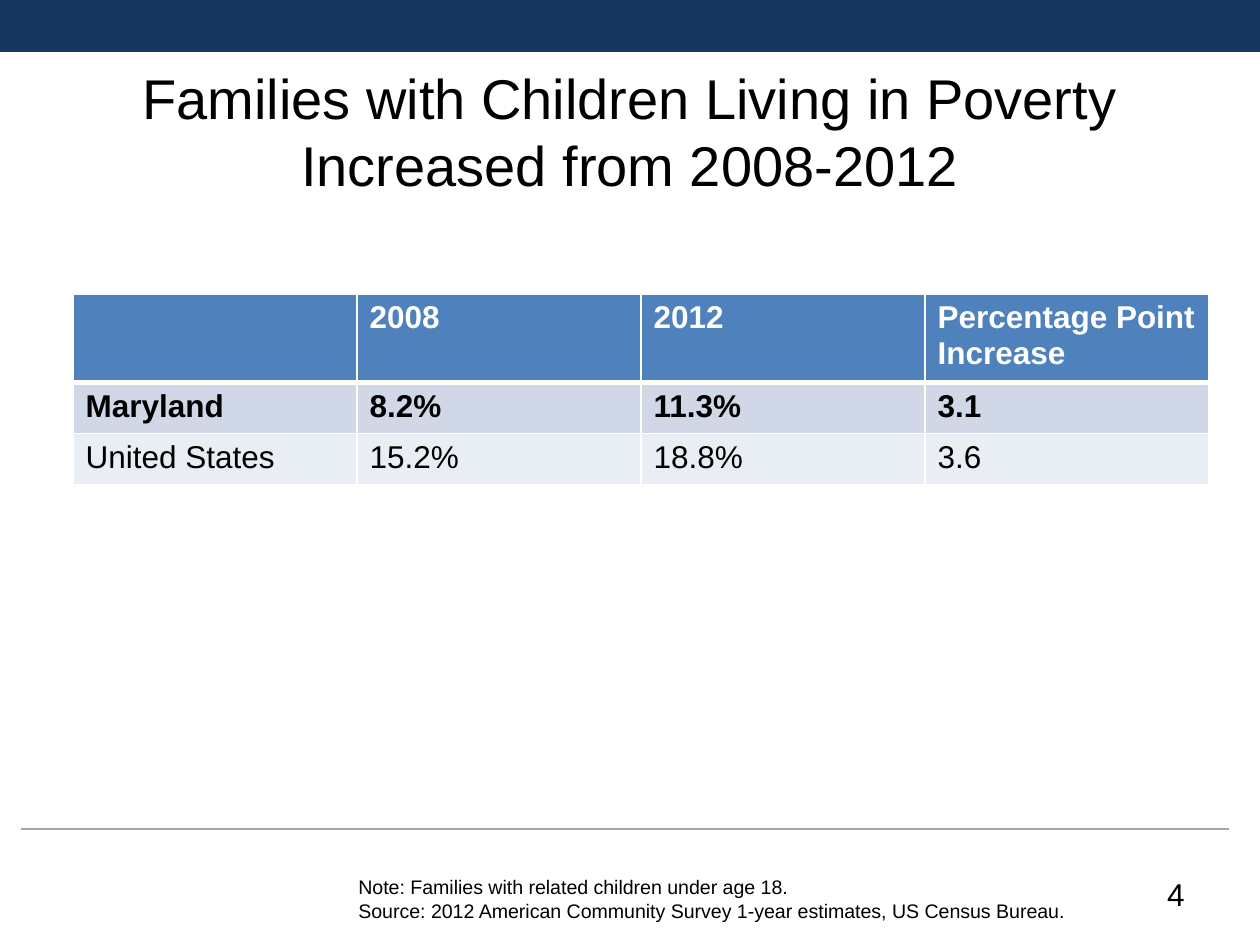
from pptx import Presentation
from pptx import util as u
from pptx.dml.color import RGBColor
from pptx.enum import shapes, text
from pptx.oxml.ns import qn
from lxml import etree

EMU_PER_PX = 914400 / 126
COLORS = {
    "navy": "17375E",
    "rule": "A6A6A6",
    "black": "000000",
    "white": "FFFFFF",
    "header": "4F81BD",
    "band_dark": "D0D8E8",
    "band_light": "E9EDF4",
}


def px(length):
    return u.Emu(round(length * EMU_PER_PX))


def rgb(name):
    return RGBColor.from_string(COLORS[name])


class SlideBuilder:
    font_name = "Arial"

    def __init__(self, slide):
        self.slide = slide

    def style(self, para, size, color="black", bold=False):
        para.font.name = self.font_name
        para.font.size = u.Pt(size)
        para.font.bold = bold
        para.font.color.rgb = rgb(color)

    def bar(self, left, top, width, height, color):
        bar = self.slide.shapes.add_shape(
            shapes.MSO_SHAPE.RECTANGLE, px(left), px(top), px(width), px(height))
        bar.shadow.inherit = False
        bar.fill.solid()
        bar.fill.fore_color.rgb = rgb(color)
        bar.line.fill.background()

    def rule(self, left, right, y, color, weight):
        rule = self.slide.shapes.add_connector(
            shapes.MSO_CONNECTOR.STRAIGHT, px(left), px(y), px(right), px(y))
        rule.line.color.rgb = rgb(color)
        rule.line.width = u.Pt(weight)
        etree.SubElement(rule._element.spPr, qn("a:effectLst"))

    def text(self, left, top, width, height, lines, size,
             align=text.PP_ALIGN.LEFT, anchor=text.MSO_ANCHOR.TOP):
        box = self.slide.shapes.add_textbox(px(left), px(top), px(width), px(height))
        frame = box.text_frame
        frame.word_wrap = True
        frame.vertical_anchor = anchor
        frame.text = "\n".join(lines)
        for para in frame.paragraphs:
            para.alignment = align
            self.style(para, size)

    def borders(self, cell, bottom):
        properties = cell._tc.get_or_add_tcPr()
        weights = {"lnL": 1, "lnR": 1, "lnT": 1, "lnB": bottom}
        for position, (side, weight) in enumerate(weights.items()):
            line = etree.Element(qn(f"a:{side}"), w=str(u.Pt(weight)))
            fill = etree.SubElement(line, qn("a:solidFill"))
            etree.SubElement(fill, qn("a:srgbClr"), val=COLORS["white"])
            properties.insert(position, line)

    def table(self, left, top, column_width, heights, rows, looks, size):
        columns = len(rows[0])
        table = self.slide.shapes.add_table(
            len(rows), columns, px(left), px(top),
            px(column_width * columns), px(sum(heights))).table
        for column in table.columns:
            column.width = px(column_width)
        for r, (values, height, look) in enumerate(zip(rows, heights, looks)):
            fill, color, bold, bottom = look
            table.rows[r].height = px(height)
            for c, value in enumerate(values):
                cell = table.cell(r, c)
                cell.text = value
                cell.fill.solid()
                cell.fill.fore_color.rgb = rgb(fill)
                self.style(cell.text_frame.paragraphs[0], size, color, bold)
                self.borders(cell, bottom)


def main():
    deck = Presentation()
    deck.slide_width, deck.slide_height = px(1260), px(945)
    page = SlideBuilder(deck.slides.add_slide(deck.slide_layouts[6]))

    page.bar(0, 0, 1260, 52, "navy")
    page.rule(21, 1229, 829, "rule", 0.75)
    page.text(63, 63, 1134, 136,
              ["Families with Children Living in Poverty Increased from 2008-2012"],
              32, text.PP_ALIGN.CENTER, text.MSO_ANCHOR.MIDDLE)
    page.table(
        73, 294, 284, [83, 51, 51],
        [["", "2008", "2012", "Percentage Point Increase"],
         ["Maryland", "8.2%", "11.3%", "3.1"],
         ["United States", "15.2%", "18.8%", "3.6"]],
        [("header", "white", True, 3),
         ("band_dark", "black", True, 1),
         ("band_light", "black", False, 1)],
        18)
    page.text(903, 869, 294, 50, ["4"], 18, text.PP_ALIGN.RIGHT)
    page.text(346, 869, 746, 50,
              ["Note: Families with related children under age 18.",
               "Source: 2012 American Community Survey 1-year estimates, US Census Bureau."],
              11.2)
    deck.save("out.pptx")


if __name__ == "__main__":
    main()
